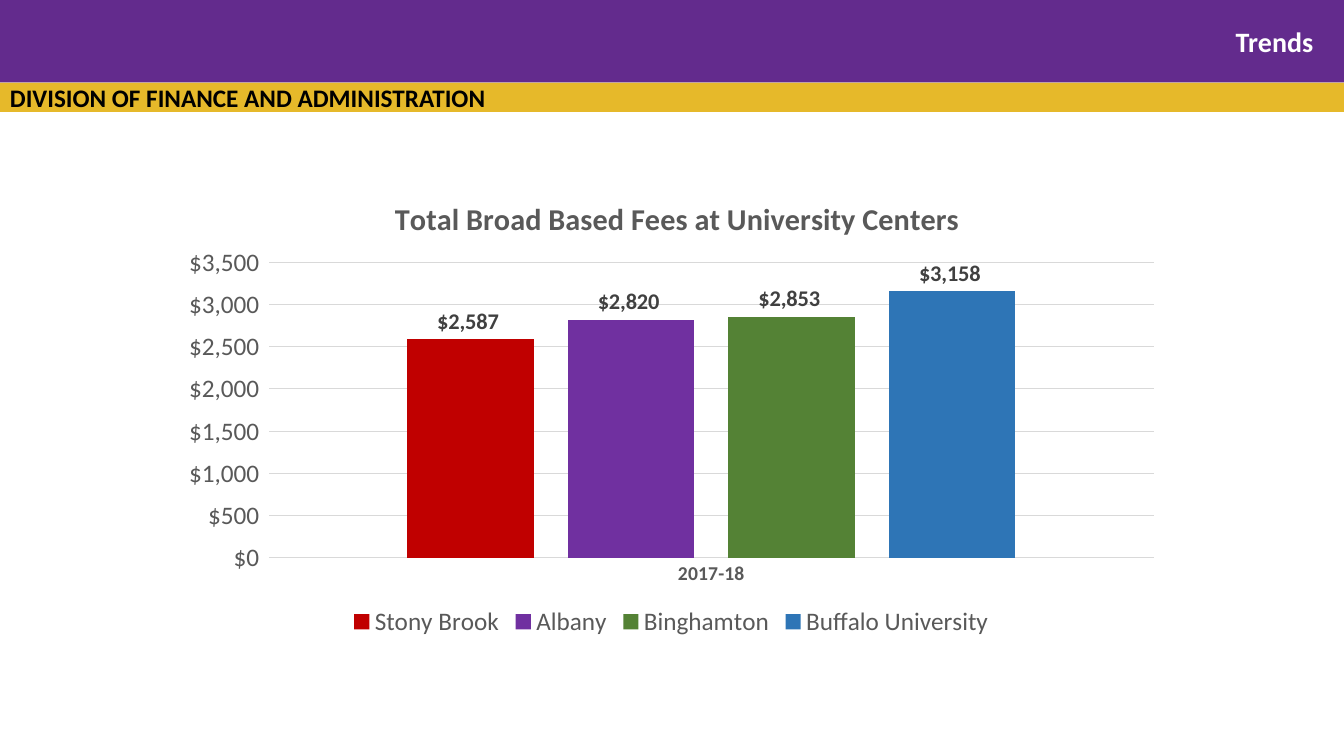
from pptx import Presentation
from pptx.chart.data import CategoryChartData
from pptx.dml.color import RGBColor
from pptx.enum.chart import XL_CHART_TYPE, XL_LABEL_POSITION, XL_LEGEND_POSITION, XL_TICK_MARK
from pptx.enum.shapes import MSO_SHAPE
from pptx.enum.text import MSO_ANCHOR, PP_ALIGN
from pptx.oxml import parse_xml
from pptx.oxml.ns import nsdecls, qn
from pptx.util import Cm, Pt

COLOURS = {
    "purple": "632B8D",
    "gold": "E6B92A",
    "black": "000000",
    "white": "FFFFFF",
    "grey": "595959",
    "label": "404040",
    "grid": "D9D9D9",
}
FEES = [
    ("Stony Brook", 2587, "C00000"),
    ("Albany", 2820, "7030A0"),
    ("Binghamton", 2853, "548235"),
    ("Buffalo University", 3158, "2E75B6"),
]
DOLLARS = '"$"#,##0_);[Red]\\("$"#,##0\\)'
SLIDE_WIDTH = 33.87


class FeeSlide:
    font_name = "Calibri"

    def __init__(self, presentation):
        self.slide = presentation.slides.add_slide(presentation.slide_layouts[5])

    def style(self, font, size, colour, bold=False):
        font.name = self.font_name
        font.size = Pt(size)
        font.bold = bold
        font.color.rgb = RGBColor.from_string(COLOURS[colour])

    def band(self, top, height, colour, wording=""):
        stripe = self.slide.shapes.add_shape(
            MSO_SHAPE.RECTANGLE, Cm(0), Cm(top), Cm(SLIDE_WIDTH), Cm(height))
        stripe.shadow.inherit = False
        stripe.fill.solid()
        stripe.fill.fore_color.rgb = RGBColor.from_string(COLOURS[colour])
        stripe.line.fill.background()
        if wording:
            frame = stripe.text_frame
            frame.text = wording
            frame.margin_top = frame.margin_bottom = Cm(0)
            frame.vertical_anchor = MSO_ANCHOR.MIDDLE
            frame.paragraphs[0].alignment = PP_ALIGN.LEFT
            self.style(frame.paragraphs[0].runs[0].font, 18, "black", True)

    def heading(self, wording, left, top, width, height):
        title = self.slide.shapes.title
        title.left, title.top, title.width, title.height = map(Cm, (left, top, width, height))
        title.text_frame.text = wording
        title.text_frame.vertical_anchor = MSO_ANCHOR.MIDDLE
        heading_line = title.text_frame.paragraphs[0]
        heading_line.alignment = PP_ALIGN.RIGHT
        self.style(heading_line.runs[0].font, 20, "white", True)
        self.slide.shapes._spTree.append(title._element)

    def place(self, part, index, **fractions):
        for automatic in part.findall(qn("c:layout")):
            part.remove(automatic)
        target = '<c:layoutTarget val="inner"/>' if "w" in fractions else ""
        modes = "".join(f'<c:{side}Mode val="edge"/>' for side in "xy")
        values = "".join(f'<c:{side} val="{value}"/>' for side, value in fractions.items())
        part.insert(index, parse_xml(
            f'<c:layout {nsdecls("c")}><c:manualLayout>{target}{modes}{values}'
            "</c:manualLayout></c:layout>"))

    def fee_chart(self, wording, year, left, top, width, height):
        fees = CategoryChartData(number_format=DOLLARS)
        fees.categories = [year]
        for campus, fee, _ in FEES:
            fees.add_series(campus, [fee])
        chart = self.slide.shapes.add_chart(
            XL_CHART_TYPE.COLUMN_CLUSTERED, Cm(left), Cm(top), Cm(width), Cm(height), fees).chart
        self.style(chart.font, 18, "black")

        chart.has_title = True
        chart.chart_title.text_frame.text = wording
        self.style(chart.chart_title.text_frame.paragraphs[0].runs[0].font, 21.6, "grey", True)
        chart.chart_title.include_in_layout = False
        self.place(chart.chart_title._element, 1, x=0.22, y=0.04)
        self.place(chart._chartSpace.chart.plotArea, 0, x=0.1, y=0.19, w=0.88, h=0.63)

        chart.has_legend = True
        chart.legend.position = XL_LEGEND_POSITION.BOTTOM
        chart.legend.include_in_layout = False
        self.style(chart.legend.font, 18, "grey")
        self.axes(chart)
        self.columns(chart.plots[0])

    def axes(self, chart):
        years, dollars = chart.category_axis, chart.value_axis
        for axis in (years, dollars):
            axis.major_tick_mark = axis.minor_tick_mark = XL_TICK_MARK.NONE
        self.style(years.tick_labels.font, 14, "grey", True)
        self.style(dollars.tick_labels.font, 18, "grey")
        dollars.minimum_scale, dollars.maximum_scale, dollars.major_unit = 0, 3500, 500
        dollars.tick_labels.number_format = DOLLARS
        dollars.tick_labels.number_format_is_linked = False
        dollars.format.line.fill.background()
        for line in (years.format.line, dollars.major_gridlines.format.line):
            line.color.rgb = RGBColor.from_string(COLOURS["grid"])
            line.width = Pt(0.75)

    def columns(self, plot):
        plot.gap_width = 219
        plot.overlap = -27
        plot.vary_by_categories = False
        for column, (_, _, colour) in zip(plot.series, FEES):
            column.format.fill.solid()
            column.format.fill.fore_color.rgb = RGBColor.from_string(colour)
            labels = column.data_labels
            labels.show_value = True
            labels.position = XL_LABEL_POSITION.OUTSIDE_END
            labels.number_format = DOLLARS
            labels.number_format_is_linked = False
            self.style(labels.font, 16, "label", True)


def main():
    presentation = Presentation()
    presentation.slide_width = Cm(SLIDE_WIDTH)
    presentation.slide_height = Cm(19.05)
    trends = FeeSlide(presentation)
    trends.band(2.08, 0.74, "gold", "DIVISION OF FINANCE AND ADMINISTRATION")
    trends.band(0, 2.08, "purple")
    trends.fee_chart("Total Broad Based Fees at University Centers", "2017-18",
                     4.24, 4.37, 25.35, 11.81)
    trends.heading("Trends", 23.19, 0.48, 10.16, 1.12)
    presentation.save("out.pptx")


if __name__ == "__main__":
    main()
